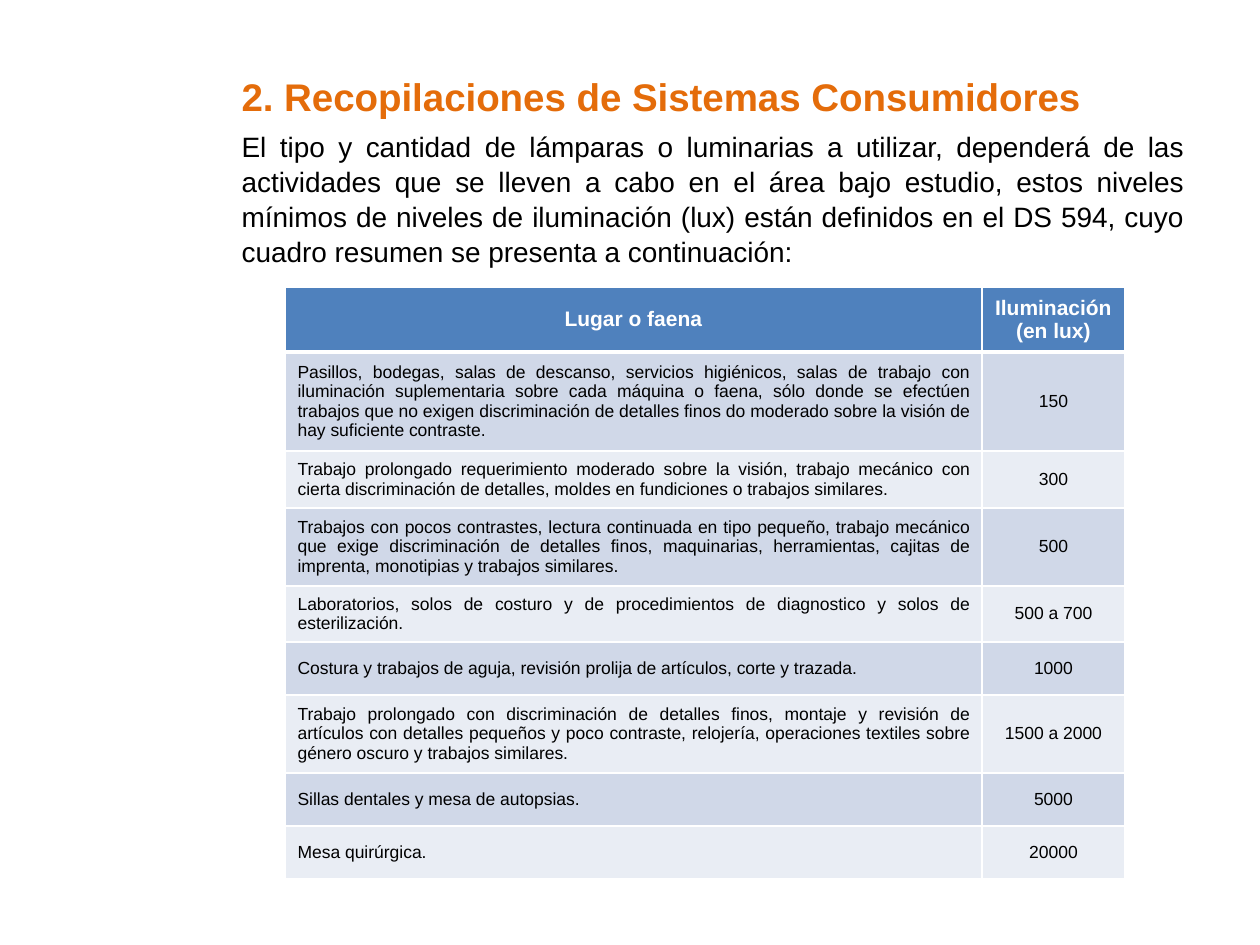
from typing import NamedTuple

from lxml import etree
from pptx import Presentation
from pptx import util as u
from pptx.dml.color import RGBColor
from pptx.enum import text
from pptx.oxml.ns import qn

EMU_PER_PX = 914400 / 126
FONT = "Arial"
WHITE, BLACK, ORANGE = "FFFFFF", "000000", "E46C0A"
HEADER_FILL, BAND_FILLS = "4F81BD", ("D0D8E8", "E9EDF4")
COLUMN_WIDTHS = (697, 143)


class Level(NamedTuple):
    place: str
    lux: str
    height: int


HEADER = Level("Lugar o faena", "Iluminación (en lux)", 65)
LEVELS = [
    Level("Pasillos, bodegas, salas de descanso, servicios higiénicos, salas de "
          "trabajo con iluminación suplementaria sobre cada máquina o faena, sólo "
          "donde se efectúen trabajos que no exigen discriminación de detalles finos "
          "do moderado sobre la visión de hay suficiente contraste.", "150", 99),
    Level("Trabajo prolongado requerimiento moderado sobre la visión, trabajo "
          "mecánico con cierta discriminación de detalles, moldes en fundiciones o "
          "trabajos similares.", "300", 57),
    Level("Trabajos con pocos contrastes, lectura continuada en tipo pequeño, trabajo "
          "mecánico que exige discriminación de detalles finos, maquinarias, "
          "herramientas, cajitas de imprenta, monotipias y trabajos similares.",
          "500", 78),
    Level("Laboratorios, solos de costuro y de procedimientos de diagnostico y solos "
          "de esterilización.", "500 a 700", 56),
    Level("Costura y trabajos de aguja, revisión prolija de artículos, corte y "
          "trazada.", "1000", 53),
    Level("Trabajo prolongado con discriminación de detalles finos, montaje y "
          "revisión de artículos con detalles pequeños y poco contraste, relojería, "
          "operaciones textiles sobre género oscuro y trabajos similares.",
          "1500 a 2000", 78),
    Level("Sillas dentales y mesa de autopsias.", "5000", 53),
    Level("Mesa quirúrgica.", "20000", 53),
]


def px(length: int) -> int:
    return round(length * EMU_PER_PX)


def color(code: str) -> RGBColor:
    return RGBColor.from_string(code)


def style(para, size: int, code: str, align, bold: bool = False) -> None:
    para.alignment = align
    for span in para.runs:
        font = span.font
        font.name, font.size, font.bold = FONT, u.Pt(size), bold
        font.color.rgb = color(code)


def fill_placeholder(box, bounds: tuple, words: str, anchor):
    """Move a placeholder, set its text and return the only paragraph."""
    box.left, box.top, box.width, box.height = map(px, bounds)
    frame = box.text_frame
    frame.text = words
    frame.word_wrap = True
    frame.auto_size = text.MSO_AUTO_SIZE.NONE
    frame.vertical_anchor = anchor
    return frame.paragraphs[0]


def draw_borders(cell, bottom: int) -> None:
    """White cell borders; they must come before the fill in the XML."""
    properties = cell._tc.get_or_add_tcPr()
    widths = {"a:lnL": 1, "a:lnR": 1, "a:lnT": 1, "a:lnB": bottom}
    for index, (side, width) in enumerate(widths.items()):
        line = etree.Element(qn(side), w=str(u.Pt(width)))
        solid = etree.SubElement(line, qn("a:solidFill"))
        etree.SubElement(solid, qn("a:srgbClr"), val=WHITE)
        properties.insert(index, line)


def draw_cell(cell, words: str, fill: str, align, header: bool) -> None:
    cell.text = words
    cell.vertical_anchor = text.MSO_ANCHOR.MIDDLE
    cell.fill.solid()
    cell.fill.fore_color.rgb = color(fill)
    size, code = (12, WHITE) if header else (10, BLACK)
    style(cell.text_frame.paragraphs[0], size, code, align, header)
    draw_borders(cell, 3 if header else 1)


def draw_table(page, left: int, top: int) -> None:
    rows = [HEADER, *LEVELS]
    height = sum(row.height for row in rows)
    table = page.shapes.add_table(
        len(rows), len(COLUMN_WIDTHS), px(left), px(top),
        px(sum(COLUMN_WIDTHS)), px(height)).table
    for column, width in zip(table.columns, COLUMN_WIDTHS):
        column.width = px(width)
    for index, row in enumerate(rows):
        header = index == 0
        table.rows[index].height = px(row.height)
        fill = HEADER_FILL if header else BAND_FILLS[(index - 1) % 2]
        place_align = text.PP_ALIGN.CENTER if header else text.PP_ALIGN.JUSTIFY
        draw_cell(table.cell(index, 0), row.place, fill, place_align, header)
        draw_cell(table.cell(index, 1), row.lux, fill, text.PP_ALIGN.CENTER, header)


def main() -> None:
    deck = Presentation()
    deck.slide_width, deck.slide_height = px(1260), px(945)
    page = deck.slides.add_slide(deck.slide_layouts[1])
    title, body = page.placeholders

    # Title
    para = fill_placeholder(title, (229, 66, 906, 56),
                            "2. Recopilaciones de Sistemas Consumidores",
                            text.MSO_ANCHOR.BOTTOM)
    title.text_frame.margin_bottom = px(3)
    style(para, 22, ORANGE, text.PP_ALIGN.LEFT, True)

    # Introduction, without the template's bullet and indent
    para = fill_placeholder(
        body, (229, 122, 968, 785),
        "El tipo y cantidad de lámparas o luminarias a utilizar, dependerá de las "
        "actividades que se lleven a cabo en el área bajo estudio, estos niveles "
        "mínimos de niveles de iluminación (lux) están definidos en el DS 594, cuyo "
        "cuadro resumen se presenta a continuación:", text.MSO_ANCHOR.TOP)
    properties = para._p.get_or_add_pPr()
    properties.set("marL", "0")
    properties.set("indent", "0")
    etree.SubElement(properties, qn("a:buNone"))
    para.space_before = u.Pt(0)
    para.line_spacing = 1.04
    style(para, 16, BLACK, text.PP_ALIGN.JUSTIFY)

    # Minimum lighting levels
    draw_table(page, 285, 287)

    deck.save("out.pptx")


if __name__ == "__main__":
    main()
